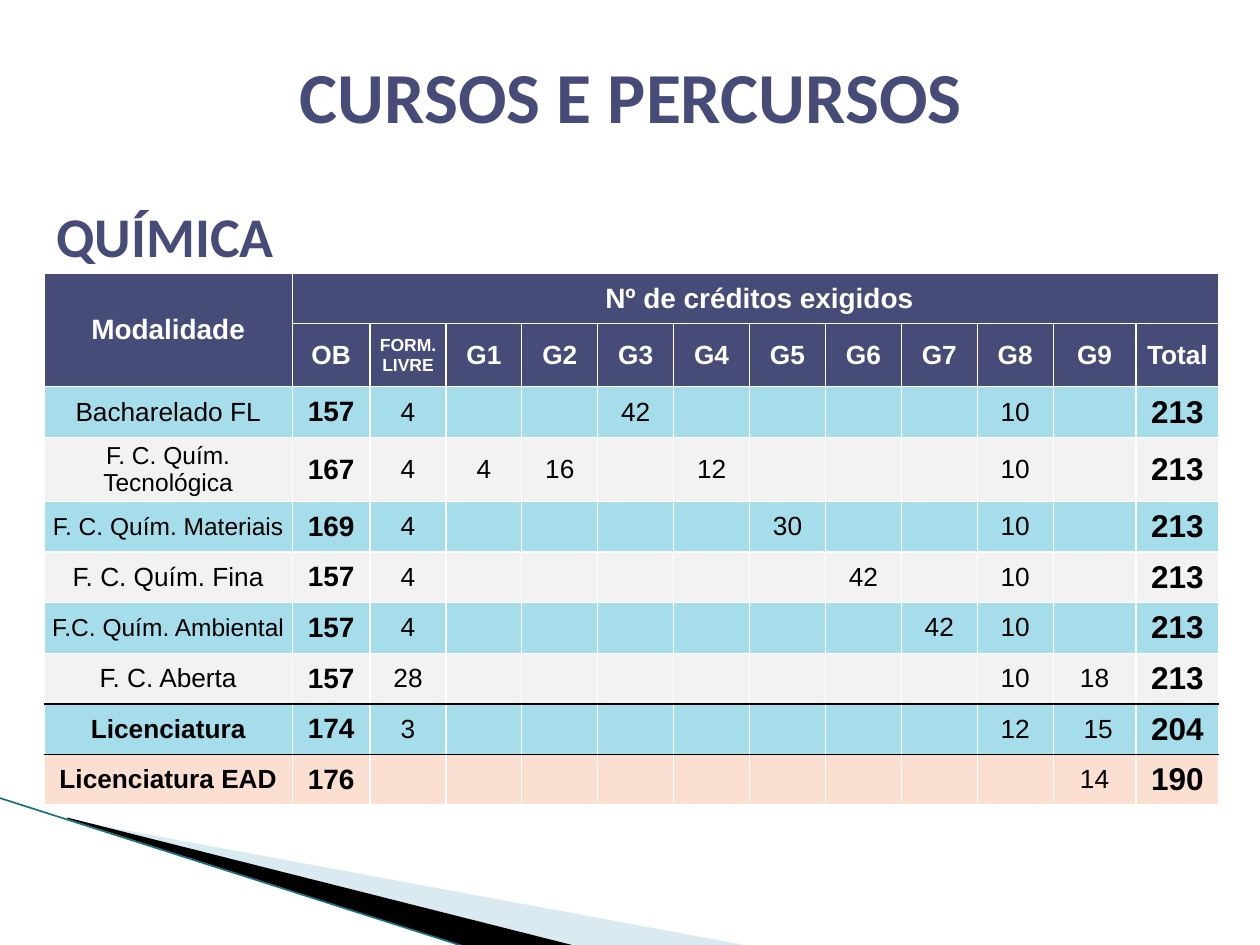
import pptx
import pptx.util
import pptx.dml.color
import pptx.enum.shapes
import pptx.enum.text
import pptx.oxml
import pptx.oxml.ns
from dataclasses import dataclass
from lxml import etree

Cm, Pt = pptx.util.Cm, pptx.util.Pt
Align, Anchor = pptx.enum.text.PP_ALIGN, pptx.enum.text.MSO_ANCHOR
qn = pptx.oxml.ns.qn


@dataclass(frozen=True)
class Theme:
    navy: str = "474B78"
    white: str = "FFFFFF"
    black: str = "000000"
    aqua: str = "A6DDEA"
    grey: str = "F2F2F2"
    peach: str = "FBE0D1"
    mist: str = "A0CBDC"
    teal: str = "1B6F83"
    head: str = "Calibri"
    body: str = "Arial"
    title: float = 41
    topic: float = 32
    total: float = 18
    strong: float = 16
    plain: float = 15
    small: float = 14
    tiny: float = 10


def rgb(code):
    return pptx.dml.color.RGBColor.from_string(code)


class Deck:
    def __init__(self, theme):
        self.theme = theme
        self.file = pptx.Presentation()
        self.file.slide_width, self.file.slide_height = Cm(25.4), Cm(19.05)
        self.slide = self.file.slides.add_slide(self.file.slide_layouts[5])

    def run(self, par, text, size, color, bold=True, font=None):
        run = par.add_run()
        run.text = text
        run.font.name = font or self.theme.body
        run.font.size, run.font.bold = Pt(size), bold
        run.font.color.rgb = rgb(color)

    def title(self, text, box):
        shape = self.slide.shapes.title
        shape.left, shape.top, shape.width, shape.height = map(Cm, box)
        frame = shape.text_frame
        frame.auto_size = pptx.enum.text.MSO_AUTO_SIZE.NONE
        frame.vertical_anchor = Anchor.MIDDLE
        frame.paragraphs[0].alignment = Align.CENTER
        self.run(frame.paragraphs[0], text, self.theme.title,
                 self.theme.navy, font=self.theme.head)

    def label(self, text, box):
        frame = self.slide.shapes.add_textbox(*map(Cm, box)).text_frame
        frame.word_wrap = True
        self.run(frame.paragraphs[0], text, self.theme.topic,
                 self.theme.navy, font=self.theme.head)

    def wedge(self, points, color, alpha=100):
        points = [(Cm(x), Cm(y)) for x, y in points]
        form = self.slide.shapes.build_freeform(*points[0], scale=1.0)
        form.add_line_segments(points[1:], close=True)
        shape = form.convert_to_shape()
        shape.shadow.inherit = False
        shape.fill.solid()
        shape.fill.fore_color.rgb = rgb(color)
        shape.line.fill.background()
        if alpha < 100:
            tint = shape._element.spPr.find(".//" + qn("a:srgbClr"))
            etree.SubElement(tint, qn("a:alpha"), val=str(alpha * 1000))

    def line(self, start, end, color, width):
        kind = pptx.enum.shapes.MSO_CONNECTOR.STRAIGHT
        line = self.slide.shapes.add_connector(kind, *map(Cm, start + end))
        line.line.color.rgb = rgb(color)
        line.line.width = Pt(width)
        etree.SubElement(line._element.spPr, qn("a:effectLst"))

    def grid(self, spot, widths, heights):
        size = Cm(sum(widths)), Cm(sum(heights))
        table = self.slide.shapes.add_table(
            len(heights), len(widths), *map(Cm, spot), *size).table
        for col, width in zip(table.columns, widths):
            col.width = Cm(width)
        for row, height in zip(table.rows, heights):
            row.height = Cm(height)
        return table

    def cell(self, cell, fill, top=False, base=False):
        """Paint one cell; top and base ask for a black rule on that edge."""
        props = cell._tc.get_or_add_tcPr()
        for side, dark in (("L", False), ("R", False), ("T", top), ("B", base)):
            edge = etree.SubElement(props, qn("a:ln" + side),
                                    w=str(int(Pt(1 if dark else 0.75))))
            paint = etree.SubElement(edge, qn("a:solidFill"))
            etree.SubElement(paint, qn("a:srgbClr"),
                             val=self.theme.black if dark else self.theme.white)
        cell.fill.solid()
        cell.fill.fore_color.rgb = rgb(fill)

    def entry(self, cell, text, size, color, bold):
        cell.vertical_anchor = Anchor.MIDDLE
        cell.margin_left = cell.margin_right = Cm(0.05)
        cell.margin_top = cell.margin_bottom = Cm(0.05)
        par = cell.text_frame.paragraphs[0]
        par.alignment = Align.CENTER
        self.run(par, text, size, color, bold)


HEADS = ["OB", "FORM. LIVRE", *(f"G{n}" for n in range(1, 10)), "Total"]

# Each course: name, name size, then its credits by column head
T = Theme()
ROWS = [
    ("Bacharelado FL", T.plain, {"OB": 157, "FORM. LIVRE": 4, "G3": 42, "G8": 10, "Total": 213}),
    ("F. C. Quím. Tecnológica", T.small,
     {"OB": 167, "FORM. LIVRE": 4, "G1": 4, "G2": 16, "G4": 12, "G8": 10, "Total": 213}),
    ("F. C. Quím. Materiais", T.small,
     {"OB": 169, "FORM. LIVRE": 4, "G5": 30, "G8": 10, "Total": 213}),
    ("F. C. Quím. Fina", T.plain, {"OB": 157, "FORM. LIVRE": 4, "G6": 42, "G8": 10, "Total": 213}),
    ("F.C. Quím. Ambiental", T.small,
     {"OB": 157, "FORM. LIVRE": 4, "G7": 42, "G8": 10, "Total": 213}),
    ("F. C. Aberta", T.plain, {"OB": 157, "FORM. LIVRE": 28, "G8": 10, "G9": 18, "Total": 213}),
    ("Licenciatura", T.plain,
     {"OB": 174, "FORM. LIVRE": 3, "G8": 12, "G9": " 15", "Total": 204}),
    ("Licenciatura EAD", T.plain, {"OB": 176, "G9": 14, "Total": 190}),
]


def credits(deck):
    widths = [5, 1.57] + [1.53] * 9 + [1.67] * 2
    heights = [1.02, 1.27, 1.02, 1.27] + [1.02] * 6
    table = deck.grid((0.89, 5.51), widths, heights)

    # Header rows
    for row in range(2):
        for col in range(len(widths)):
            deck.cell(table.cell(row, col), T.navy)
    table.cell(0, 0).merge(table.cell(1, 0))
    table.cell(0, 1).merge(table.cell(0, len(HEADS)))
    deck.entry(table.cell(0, 0), "Modalidade", T.strong, T.white, True)
    deck.entry(table.cell(0, 1), " Nº de créditos exigidos", T.strong, T.white, True)
    for col, head in enumerate(HEADS, 1):
        size = T.tiny if head == "FORM. LIVRE" else T.plain
        deck.entry(table.cell(1, col), head, size, T.white, True)

    # Course rows: banded, with black rules around the teaching degree
    sizes = {"OB": T.strong, "Total": T.total}
    last = len(ROWS) - 1
    for at, (name, size, marks) in enumerate(ROWS):
        fill = T.peach if at == last else (T.aqua, T.grey)[at % 2]
        for col in range(len(widths)):
            deck.cell(table.cell(at + 2, col), fill,
                      top=at >= last - 1, base=last - 2 <= at < last)
        deck.entry(table.cell(at + 2, 0), name, size, T.black, at >= last - 1)
        for head, mark in marks.items():
            deck.entry(table.cell(at + 2, HEADS.index(head) + 1), str(mark),
                       sizes.get(head, T.plain), T.black, head in sizes)


def main():
    deck = Deck(T)
    # Corner wedges
    deck.wedge([(1.4, 16.53), (15.11, 19.07), (11.58, 19.07), (1.4, 16.51)], T.mist, 40)
    deck.wedge([(1.35, 16.48), (11.61, 19.07), (9.45, 19.1), (1.37, 16.51)], T.black)
    deck.line((-0.03, 16.08), (9.42, 19.1), T.teal, 0.95)
    # Headings and table
    deck.title("CURSOS E PERCURSOS", (2.31, 0.33, 20.83, 3.18))
    deck.label("QUÍMICA", (0.89, 3.94, 10.8, 1.63))
    credits(deck)
    deck.file.save("out.pptx")


if __name__ == "__main__":
    main()
